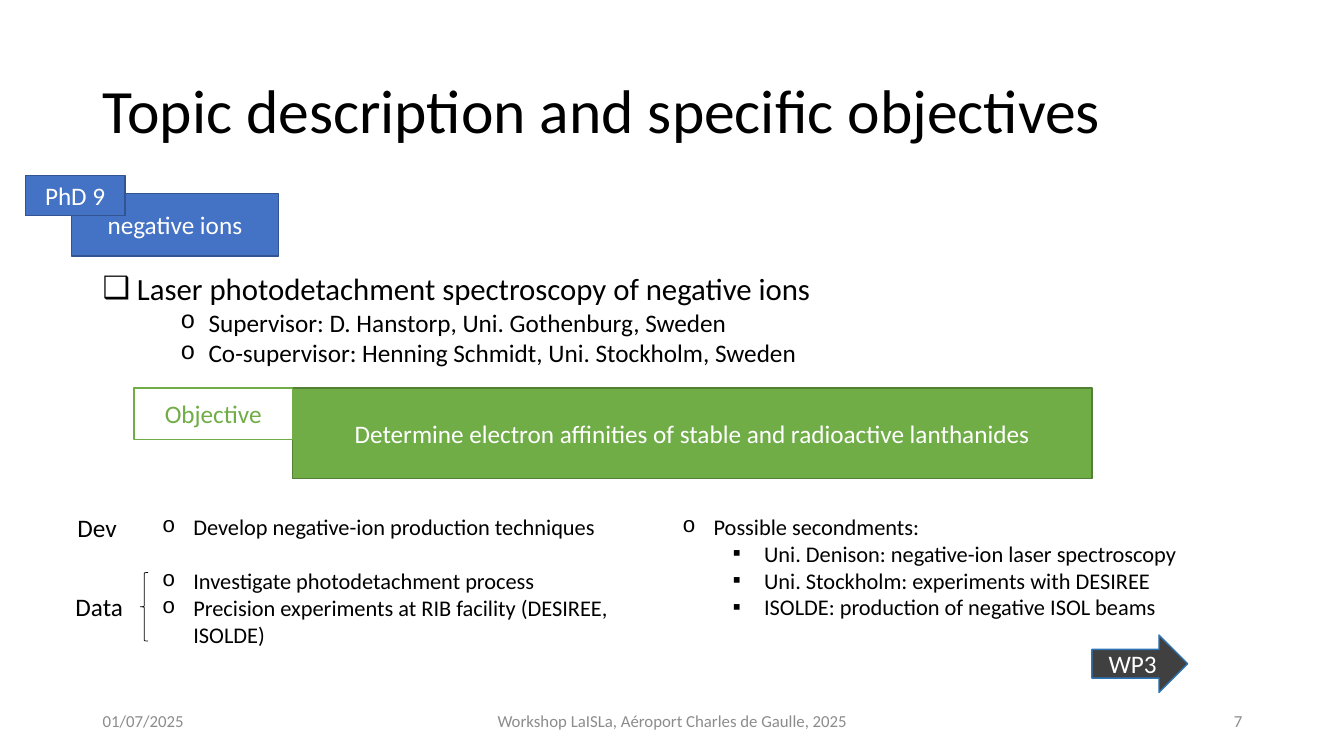
from lxml.etree import SubElement
from pptx import Presentation
from pptx.dml.color import RGBColor
from pptx.enum.shapes import MSO_SHAPE
from pptx.enum.text import MSO_ANCHOR, PP_ALIGN
from pptx.oxml.ns import qn
from pptx.util import Pt

PX = 9144
FONT = "Calibri"
COLORS = {
    "black": "000000", "white": "FFFFFF", "gray": "8C8C8C", "dark": "404040",
    "blue": "4472C4", "blue_edge": "325491", "arrow_edge": "2E75B6",
    "green": "70AD47", "green_edge": "538035",
}
CHECKBOX = ("❑", FONT, 34, -34)
CIRCLE = ("o", "Courier New", 31, -31)
DEEP_CIRCLE = ("o", "Courier New", 105, -28)
SQUARE = ("▪", FONT, 81, -31)


def color(name):
    return RGBColor.from_string(COLORS[name])


def style_paragraph(paragraph, size, ink, align):
    paragraph.alignment = align
    for run in paragraph.runs:
        run.font.name = FONT
        run.font.size = Pt(size)
        run.font.color.rgb = color(ink)


def set_bullet(paragraph, bullet):
    symbol, typeface, margin, indent = bullet
    properties = paragraph._p.get_or_add_pPr()
    properties.set("marL", str(margin * PX))
    properties.set("indent", str(indent * PX))
    SubElement(properties, qn("a:buFont")).set("typeface", typeface)
    SubElement(properties, qn("a:buChar")).set("char", symbol)


def add_text(slide, box, text, size, ink="black", align=PP_ALIGN.LEFT,
             anchor=MSO_ANCHOR.TOP, wrap=True):
    text_box = slide.shapes.add_textbox(*(value * PX for value in box))
    frame = text_box.text_frame
    frame.word_wrap = wrap
    frame.vertical_anchor = anchor
    frame.text = text
    style_paragraph(frame.paragraphs[0], size, ink, align)
    return frame


def add_list(slide, box, items):
    text_box = slide.shapes.add_textbox(*(value * PX for value in box))
    frame = text_box.text_frame
    frame.word_wrap = True
    for index, (text, size, bullet, gap) in enumerate(items):
        paragraph = frame.add_paragraph() if index else frame.paragraphs[0]
        paragraph.text = text
        style_paragraph(paragraph, size, "black", PP_ALIGN.LEFT)
        paragraph.space_before = Pt(gap)
        set_bullet(paragraph, bullet)


def add_block(slide, box, text, fill, edge, ink="white", kind=MSO_SHAPE.RECTANGLE):
    shape = slide.shapes.add_shape(kind, *(value * PX for value in box))
    shape.shadow.inherit = False
    shape.fill.solid()
    shape.fill.fore_color.rgb = color(fill)
    shape.line.color.rgb = color(edge)
    shape.line.width = Pt(1)
    frame = shape.text_frame
    frame.word_wrap = True
    frame.vertical_anchor = MSO_ANCHOR.MIDDLE
    frame.text = text
    style_paragraph(frame.paragraphs[0], 18, ink, PP_ALIGN.CENTER)


def add_title(slide, box):
    frame = add_text(slide, box, "Topic description and specific objectives", 44,
                     anchor=MSO_ANCHOR.MIDDLE)
    frame.paragraphs[0].line_spacing = 0.9


def add_footer(slide, box):
    left, top, width, height = box
    side, middle = 300, 450
    parts = [
        (left, side, "01/07/2025", PP_ALIGN.LEFT),
        (left + (width - middle) // 2, middle,
         "Workshop LaISLa, Aéroport Charles de Gaulle, 2025", PP_ALIGN.CENTER),
        (left + width - side, side, "7", PP_ALIGN.RIGHT),
    ]
    for x, part_width, text, align in parts:
        add_text(slide, (x, top, part_width, height), text, 12, "gray", align,
                 MSO_ANCHOR.MIDDLE)


def add_topic_tag(slide, box):
    left, top, width, height = box
    add_block(slide, (left + 46, top + 18, width - 46, height - 18),
              "negative ions", "blue", "blue_edge")
    add_block(slide, (left, top, 99, 40), "PhD 9", "blue", "blue_edge")


def add_project(slide, box):
    add_list(slide, box, [
        ("Laser photodetachment spectroscopy of negative ions", 22, CHECKBOX, 0),
        ("Supervisor: D. Hanstorp, Uni. Gothenburg, Sweden", 18, DEEP_CIRCLE, 0),
        ("Co-supervisor: Henning Schmidt, Uni. Stockholm, Sweden", 18, DEEP_CIRCLE, 0),
    ])


def add_objective(slide, box):
    left, top, width, height = box
    label = 157
    add_block(slide, (left + label, top, width - label, height),
              "Determine electron affinities of stable and radioactive lanthanides",
              "green", "green_edge")
    add_block(slide, (left, top, label, 51), "Objective", "white", "green", "green")


def add_tasks(slide, box):
    left, top, width, height = box
    add_list(slide, (left + 86, top, width - 86, height), [
        ("Develop negative-ion production techniques", 16, CIRCLE, 0),
        ("Investigate photodetachment process", 16, CIRCLE, 19.5),
        ("Precision experiments at RIB facility (DESIREE, ISOLDE)", 16, CIRCLE, 0),
    ])
    brace = slide.shapes.add_shape(
        MSO_SHAPE.LEFT_BRACE, (left + 74) * PX, (top + 64) * PX, 8 * PX, 68 * PX)
    brace.shadow.inherit = False
    brace.fill.background()
    brace.line.color.rgb = color("black")
    brace.line.width = Pt(0.5)
    add_text(slide, (left + 2, top - 1, 60, 40), "Dev", 18, wrap=False)
    add_text(slide, (left, top + 78, 68, 40), "Data", 18, wrap=False)


def add_secondments(slide, box):
    add_list(slide, box, [
        ("Possible secondments:", 16, CIRCLE, 0),
        ("Uni. Denison: negative-ion laser spectroscopy", 16, SQUARE, 0),
        ("Uni. Stockholm: experiments with DESIREE", 16, SQUARE, 0),
        ("ISOLDE: production of negative ISOL beams", 16, SQUARE, 0),
    ])


def add_package_arrow(slide, box):
    add_block(slide, box, "WP3", "dark", "arrow_edge", kind=MSO_SHAPE.RIGHT_ARROW)


def main():
    presentation = Presentation()
    presentation.slide_width = 1333 * PX
    presentation.slide_height = 750 * PX
    slide = presentation.slides.add_slide(presentation.slide_layouts[6])
    add_title(slide, (92, 40, 1150, 145))
    add_footer(slide, (92, 695, 1150, 40))
    add_topic_tag(slide, (25, 174, 251, 80))
    add_project(slide, (92, 263, 1001, 108))
    add_objective(slide, (133, 385, 950, 90))
    add_tasks(slide, (65, 504, 602, 145))
    add_secondments(slide, (667, 504, 649, 118))
    add_package_arrow(slide, (1083, 630, 95, 57))
    presentation.save("out.pptx")


if __name__ == "__main__":
    main()
